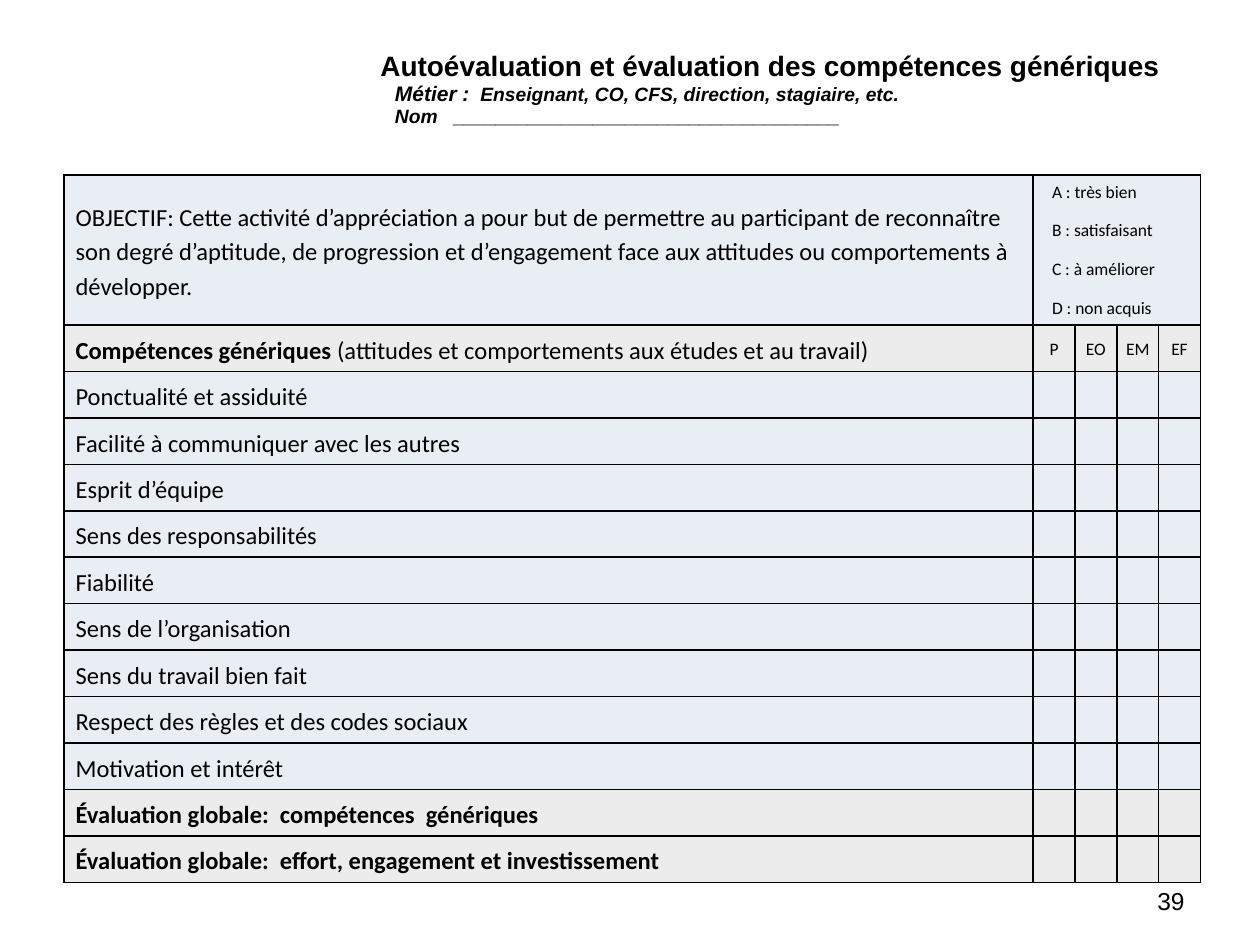
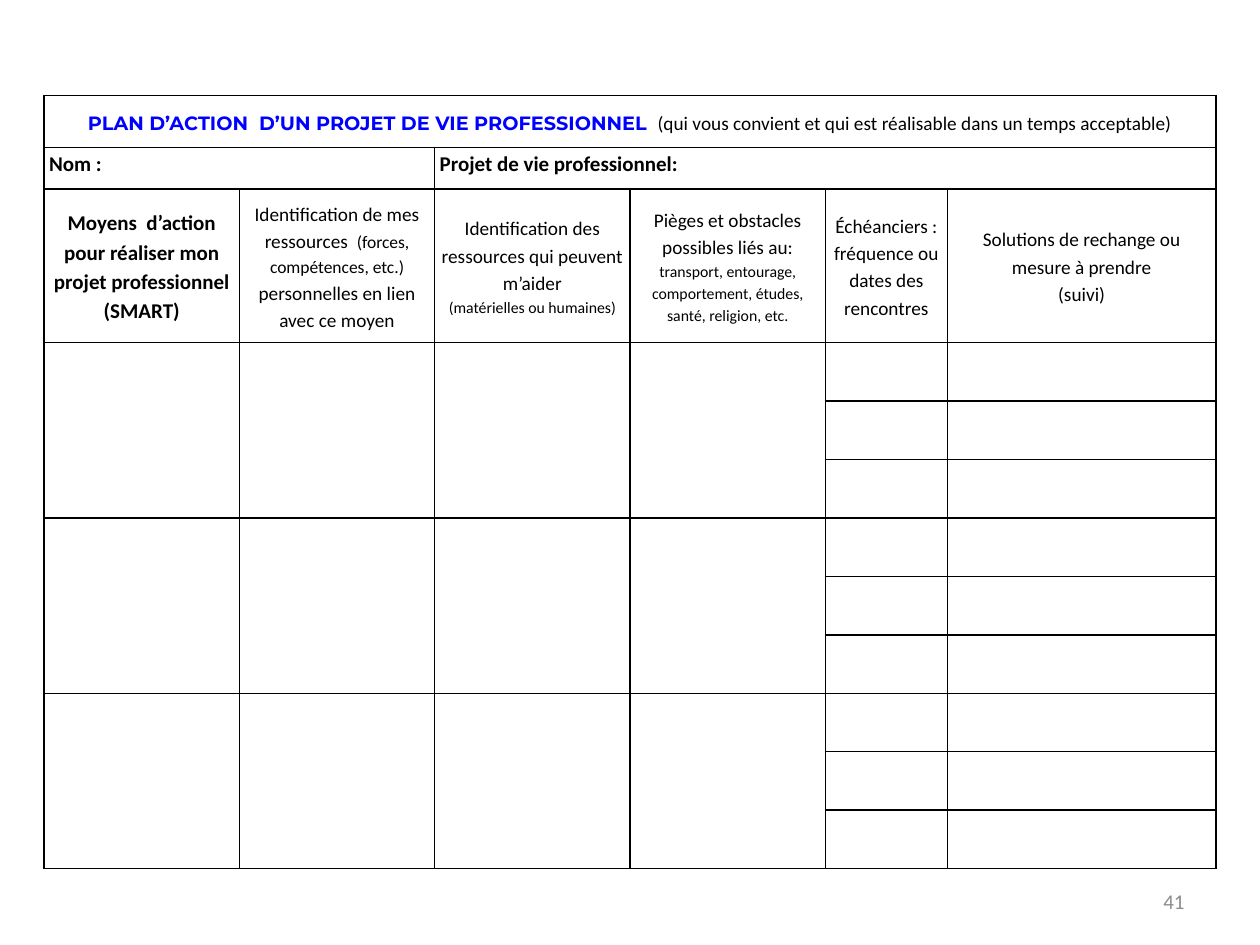
import pptx
import pptx.dml.color
import pptx.enum.text
import pptx.oxml.ns
import pptx.util
from lxml import etree

RGBColor = pptx.dml.color.RGBColor
ALIGN = pptx.enum.text.PP_ALIGN
ANCHOR = pptx.enum.text.MSO_ANCHOR

BLACK = RGBColor(0x00, 0x00, 0x00)
WHITE = RGBColor(0xFF, 0xFF, 0xFF)
BLUE = RGBColor(0x00, 0x00, 0xFF)
GREY = RGBColor(0x8C, 0x8C, 0x8C)
PALE_BLUE = RGBColor(0xE9, 0xED, 0xF4)
PALE_GREY = RGBColor(0xEC, 0xEC, 0xEC)

# The slide is a grid of 100 columns by 75 rows of square units
COLUMNS, ROWS = 100, 75
UNIT = pptx.util.Inches(0.1)
NUMBER_BOX = (71.7, 69.5, 23.3, 4)

OBJECTIVE = (
    "OBJECTIF: Cette activité d’appréciation a pour but de permettre au participant "
    "de reconnaître son degré d’aptitude, de progression et d’engagement face aux "
    "attitudes ou comportements à développer."
)
GRADES = ["A : très bien", "B : satisfaisant", "C\u00a0: à améliorer", "D\u00a0: non acquis"]
STAGES = ["P", "EO", "EM", "EF"]
SKILLS = [
    "Ponctualité et assiduité",
    "Facilité à communiquer avec les autres",
    "Esprit d’équipe",
    "Sens des responsabilités",
    "Fiabilité",
    "Sens de l’organisation",
    "Sens du travail bien fait",
    "Respect des règles et des codes sociaux",
    "Motivation et intérêt",
]
OVERALL = [
    "Évaluation globale:  compétences  génériques",
    "Évaluation globale:  effort, engagement et investissement",
]

# Each plan heading: paragraphs of (text, size) runs, and whether it is bold
PLAN_HEADINGS = [
    ([[("Moyens  d’action pour réaliser mon projet professionnel (SMART)", 12)]], True),
    ([[("Identification de mes ressources  ", 11), ("(forces, compétences, etc.) ", 10),
       ("personnelles en lien avec ce moyen", 11)]], False),
    ([[("Identification des ressources qui peuvent m’aider", 11)],
      [("(matérielles ou humaines)", 9)]], False),
    ([[("Pièges et obstacles possibles liés au:", 11)],
      [("transport, entourage, comportement, études, santé, religion, etc.", 9)]], False),
    ([[("Échéanciers\u00a0: fréquence ou dates des rencontres", 11)]], False),
    ([[("Solutions de rechange ou mesure à prendre", 11)], [("(suivi)", 11)]], False),
]


def units(count):
    return round(count * UNIT)


def set_font(font, size=None, name=None, color=None, bold=None, italic=None):
    if size:
        font.size = pptx.util.Pt(size)
    if name:
        font.name = name
    if color is not None:
        font.color.rgb = color
    if bold is not None:
        font.bold = bold
    if italic is not None:
        font.italic = italic


def add_paragraph(frame, runs, size, name="Calibri", color=BLACK, bold=False, italic=False,
                  align=ALIGN.LEFT, line=None, after=0, indent=0):
    """Runs are one text, or (text, font changes) pairs."""
    first = frame.paragraphs[0]
    paragraph = frame.add_paragraph() if first.runs else first
    paragraph.alignment = align
    paragraph.line_spacing = line
    paragraph.space_after = pptx.util.Pt(after)
    if indent:
        paragraph._p.get_or_add_pPr().set("marL", str(units(indent)))
    set_font(paragraph.font, size, name, color, bold, italic)
    for text, changes in [(runs, {})] if isinstance(runs, str) else runs:
        run = paragraph.add_run()
        run.text = text
        set_font(run.font, **changes)


def set_margins(cell, side, end):
    cell.margin_left = cell.margin_right = units(side)
    cell.margin_top = cell.margin_bottom = units(end)


def add_borders(cell):
    properties = cell._tc.get_or_add_tcPr()
    for side in ("a:lnL", "a:lnR", "a:lnT", "a:lnB"):
        border = etree.SubElement(properties, pptx.oxml.ns.qn(side), w=str(pptx.util.Pt(1)))
        fill = etree.SubElement(border, pptx.oxml.ns.qn("a:solidFill"))
        etree.SubElement(fill, pptx.oxml.ns.qn("a:srgbClr"), val=str(BLACK))


def add_grid(slide, left, top, widths, heights, bordered=True):
    """Place a plain white table whose size follows from its columns and rows."""
    table = slide.shapes.add_table(
        len(heights), len(widths), units(left), units(top),
        units(sum(widths)), units(sum(heights))).table
    table.first_row = table.horz_banding = False
    for column, width in zip(table.columns, widths):
        column.width = units(width)
    for row, height in zip(table.rows, heights):
        row.height = units(height)
    for cell in table.iter_cells():
        if bordered:
            add_borders(cell)
        cell.fill.solid()
        cell.fill.fore_color.rgb = WHITE
        set_margins(cell, 0, 0)
        set_font(cell.text_frame.paragraphs[0].font, 11)
    return table


def add_number(slide, text, **font):
    box = slide.shapes.add_textbox(*map(units, NUMBER_BOX))
    box.text_frame.word_wrap = True
    box.text_frame.vertical_anchor = ANCHOR.MIDDLE
    add_paragraph(box.text_frame, text, align=ALIGN.RIGHT, **font)


def add_evaluation_heading(slide, left, top):
    cell = add_grid(slide, left, top, [13.4, 68.9], [9.4], bordered=False).cell(0, 1)
    set_margins(cell, 1, 0.5)
    style = dict(name="Arial", bold=True)
    add_paragraph(cell.text_frame, "Autoévaluation et évaluation des compétences génériques",
                  16, **style)
    style.update(italic=True, indent=1.15)
    add_paragraph(cell.text_frame, [
        ("Métier\u00a0:", dict(size=12)),
        ("  Enseignant, CO, CFS, direction, stagiaire, etc.", {}),
    ], 11, **style)
    add_paragraph(cell.text_frame, "Nom   " + "_" * 36, 11, **style)


def add_evaluation_table(slide, left, top):
    lines = SKILLS + OVERALL
    table = add_grid(slide, left, top, [76.9] + [3.32] * 4, [11.9] + [3.65] * (len(lines) + 1))
    spacing = dict(line=1.15, after=10)
    grey_rows = {1, len(lines), len(lines) + 1}
    for number, row in enumerate(table.rows):
        for cell in row.cells:
            cell.fill.fore_color.rgb = PALE_GREY if number in grey_rows else PALE_BLUE
        set_margins(row.cells[0], 0.9, 0.5)

    # Objective and grading scale
    objective, scale = table.cell(0, 0), table.cell(0, 1)
    scale.merge(table.cell(0, 4))
    set_margins(scale, 0.9, 0.5)
    objective.vertical_anchor = scale.vertical_anchor = ANCHOR.MIDDLE
    add_paragraph(objective.text_frame, OBJECTIVE, 14, **spacing)
    for grade in GRADES:
        add_paragraph(scale.text_frame, grade, 10, after=10, indent=0.6)

    # Column headings
    heading = table.cell(1, 0)
    heading.vertical_anchor = ANCHOR.MIDDLE
    add_paragraph(heading.text_frame, [
        ("Compétences génériques ", dict(bold=True)),
        ("(attitudes et comportements aux études et au travail)", {}),
    ], 14, **spacing)
    for column, stage in enumerate(STAGES, start=1):
        cell = table.cell(1, column)
        cell.vertical_anchor = ANCHOR.MIDDLE
        add_paragraph(cell.text_frame, stage, 10, align=ALIGN.CENTER, **spacing)

    # Skills and overall marks
    for row, line in enumerate(lines, start=2):
        add_paragraph(table.cell(row, 0).text_frame, line, 14, bold=line in OVERALL, **spacing)


def add_plan_table(slide, left, top):
    table = add_grid(slide, left, top, [15.5] * 4 + [9.7, 21.3], [4.1, 3.3, 12.2] + [4.64] * 9)
    for row in range(3):
        for cell in table.rows[row].cells:
            set_margins(cell, 0.4, 0)
    centred = dict(align=ALIGN.CENTER, line=1.15)

    # Title
    title = table.cell(0, 0)
    title.merge(table.cell(0, 5))
    title.vertical_anchor = ANCHOR.MIDDLE
    add_paragraph(title.text_frame, [
        ("PLAN D’ACTION  D’UN PROJET DE VIE PROFESSIONNEL ",
         dict(name="Montserrat", color=BLUE, bold=True)),
        (" ", dict(name="Montserrat", size=10)),
        ("(qui vous convient et qui est réalisable dans un temps acceptable)", {}),
    ], 11, **centred)

    # Name and project
    for first, last, label in ((0, 1, "Nom\u00a0:"), (2, 5, "Projet de vie professionnel:")):
        cell = table.cell(1, first)
        cell.merge(table.cell(1, last))
        add_paragraph(cell.text_frame, label, 12, bold=True, line=1.15)

    # Column headings
    for column, (paragraphs, bold) in enumerate(PLAN_HEADINGS):
        cell = table.cell(2, column)
        cell.vertical_anchor = ANCHOR.MIDDLE
        for runs in paragraphs:
            base = runs[0][1]
            add_paragraph(cell.text_frame,
                          [(text, dict(size=size) if size != base else {}) for text, size in runs],
                          base, bold=bold, **centred)

    # Three plans, each with three dates
    for row in range(3, 12, 3):
        for column in range(4):
            table.cell(row, column).merge(table.cell(row + 2, column))


def build_evaluation_slide(slide):
    add_number(slide, "39", size=14, name="Arial")
    add_evaluation_heading(slide, 15.8, 3.6)
    add_evaluation_table(slide, 5.1, 13.9)


def build_plan_slide(slide):
    add_plan_table(slide, 3.5, 7.6)
    add_number(slide, "41", size=12, color=GREY)


def main():
    presentation = pptx.Presentation()
    presentation.slide_width = units(COLUMNS)
    presentation.slide_height = units(ROWS)
    blank = presentation.slide_layouts[6]
    for build in (build_evaluation_slide, build_plan_slide):
        build(presentation.slides.add_slide(blank))
    presentation.save("out.pptx")


if __name__ == "__main__":
    main()
